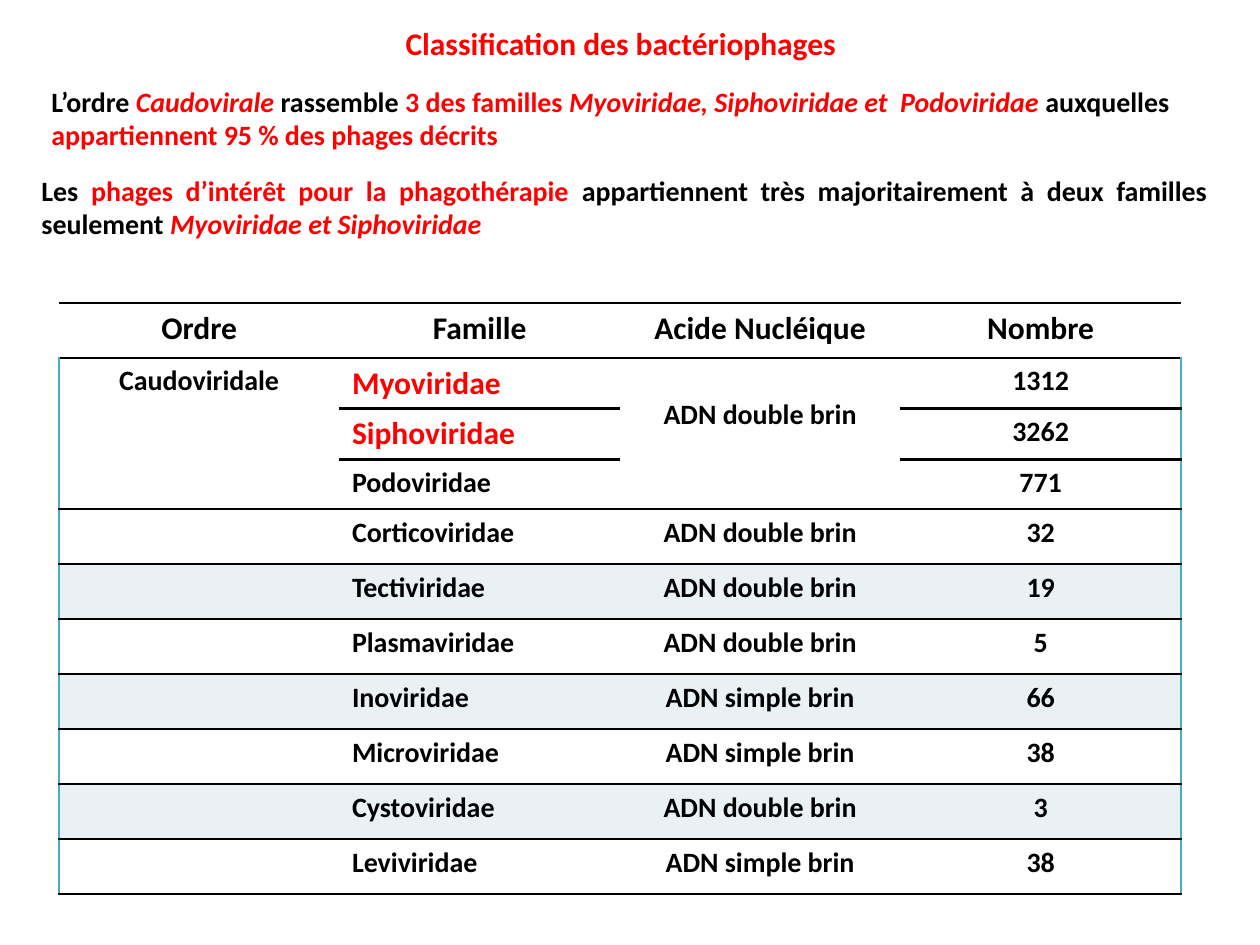
"""Build the slide on the classification of bacteriophages."""
from dataclasses import dataclass

from lxml import etree
from pptx import Presentation
from pptx.dml.color import RGBColor
from pptx.enum.text import MSO_ANCHOR, MSO_AUTO_SIZE, PP_ALIGN
from pptx.oxml.ns import qn
from pptx.util import Pt

LEFT, CENTER, JUSTIFY = PP_ALIGN.LEFT, PP_ALIGN.CENTER, PP_ALIGN.JUSTIFY
TOP = MSO_ANCHOR.TOP
FIT_SHAPE = MSO_AUTO_SIZE.SHAPE_TO_FIT_TEXT
EMU_PER_PX = 914400 // 126


@dataclass(frozen=True)
class Theme:
    font: str = "Calibri"
    text: str = "000000"
    accent: str = "FF0000"
    plain: str = "FFFFFF"
    band: str = "E9F1F5"
    rule: str = "000000"
    side: str = "4BACC6"
    large: int = 18
    body: int = 16
    rule_width: float = 1.5
    side_width: float = 1


THEME = Theme()

HEADERS = ["Ordre", "Famille", "Acide Nucléique", "Nombre"]
DOUBLE, SINGLE = "ADN double brin", "ADN simple brin"
FAMILIES = [
    ("Caudoviridale", "Myoviridae", DOUBLE, "1312"),
    ("", "Siphoviridae", "", "3262"),
    ("", "Podoviridae", "", "771"),
    ("", "Corticoviridae", DOUBLE, "32"),
    ("", "Tectiviridae", DOUBLE, "19"),
    ("", "Plasmaviridae", DOUBLE, "5"),
    ("", "Inoviridae", SINGLE, "66"),
    ("", "Microviridae", SINGLE, "38"),
    ("", "Cystoviridae", DOUBLE, "3"),
    ("", "Leviviridae", SINGLE, "38"),
]
THERAPY_FAMILIES = ("Myoviridae", "Siphoviridae")
ROW_HEIGHTS = [55, 50, 51, 50] + [55] * 7
MERGED_COLUMNS = (0, 2)
MERGE_FIRST, MERGE_LAST = 1, 3
FIRST_BANDED_ROW = 5

ORDER_RUNS = [
    ("L’ordre ", THEME.text, False),
    ("Caudovirale ", THEME.accent, True),
    ("rassemble ", THEME.text, False),
    ("3 des familles ", THEME.accent, False),
    ("Myoviridae, Siphoviridae et  Podoviridae ", THEME.accent, True),
    ("auxquelles ", THEME.text, False),
    ("appartiennent 95 % des phages décrits", THEME.accent, False),
]
THERAPY_RUNS = [
    ("Les ", THEME.text, False),
    ("phages d’intérêt pour la phagothérapie ", THEME.accent, False),
    ("appartiennent très majoritairement à deux familles seulement ", THEME.text, False),
    ("Myoviridae et Siphoviridae", THEME.accent, True),
]


def px(length):
    """Turn pixels into EMU."""
    return length * EMU_PER_PX


def format_font(font, size, color, italic=False):
    """Apply the bold slide font."""
    font.name = THEME.font
    font.size = Pt(size)
    font.bold = True
    font.italic = italic
    font.color.rgb = RGBColor.from_string(color)


def add_title(slide, text, left, top, width, height):
    """Place and format the title placeholder."""
    title = slide.shapes.title
    title.left, title.top, title.width, title.height = map(px, (left, top, width, height))
    frame = title.text_frame
    frame.text = text
    frame.word_wrap = False
    frame.auto_size = FIT_SHAPE
    frame.vertical_anchor = TOP
    paragraph = frame.paragraphs[0]
    paragraph.alignment = LEFT
    format_font(paragraph.runs[0].font, THEME.large, THEME.accent)


def add_statement(slide, runs, left, top, width, height, alignment):
    """Add a paragraph made of coloured runs."""
    frame = slide.shapes.add_textbox(*map(px, (left, top, width, height))).text_frame
    frame.word_wrap = True
    frame.auto_size = FIT_SHAPE
    paragraph = frame.paragraphs[0]
    paragraph.alignment = alignment
    for text, color, italic in runs:
        run = paragraph.add_run()
        run.text = text
        format_font(run.font, THEME.body, color, italic)


def add_border(cell, tag, color, width):
    """Add one cell border, or clear it when no colour is given."""
    properties = cell._tc.get_or_add_tcPr()
    line = etree.SubElement(properties, qn(tag), w=str(Pt(width)))
    if color is None:
        etree.SubElement(line, qn("a:noFill"))
    else:
        fill = etree.SubElement(line, qn("a:solidFill"))
        etree.SubElement(fill, qn("a:srgbClr"), val=color)


def style_cell(cell, row, column):
    """Set the borders and the fill that follow from the cell's place."""
    merged = column in MERGED_COLUMNS and MERGE_FIRST <= row <= MERGE_LAST
    left = THEME.side if row and column == 0 else None
    right = THEME.side if row and column == len(HEADERS) - 1 else None
    top = None if merged and row > MERGE_FIRST else THEME.rule
    bottom = None if merged and MERGE_FIRST < row < MERGE_LAST else THEME.rule
    add_border(cell, "a:lnL", left, THEME.side_width)
    add_border(cell, "a:lnR", right, THEME.side_width)
    add_border(cell, "a:lnT", top, THEME.rule_width)
    add_border(cell, "a:lnB", bottom, THEME.rule_width)
    banded = row >= FIRST_BANDED_ROW and row % 2
    cell.fill.solid()
    cell.fill.fore_color.rgb = RGBColor.from_string(THEME.band if banded else THEME.plain)


def fill_cell(cell, text, row, column):
    """Write and format the text of a cell."""
    cell.text_frame.text = text
    paragraph = cell.text_frame.paragraphs[0]
    paragraph.alignment = LEFT if row and column == 1 else CENTER
    highlighted = text in THERAPY_FAMILIES
    size = THEME.large if highlighted or row == 0 else THEME.body
    for run in paragraph.runs:
        format_font(run.font, size, THEME.accent if highlighted else THEME.text)


def add_family_table(slide, left, top, width):
    """Add the table of phage families."""
    rows = [HEADERS, *FAMILIES]
    bounds = map(px, (left, top, width, sum(ROW_HEIGHTS)))
    table = slide.shapes.add_table(len(rows), len(HEADERS), *bounds).table
    table.first_row = False
    table.horz_banding = False
    for table_row, height in zip(table.rows, ROW_HEIGHTS):
        table_row.height = px(height)
    for column in MERGED_COLUMNS:
        table.cell(MERGE_FIRST, column).merge(table.cell(MERGE_LAST, column))
    for row, values in enumerate(rows):
        for column, text in enumerate(values):
            cell = table.cell(row, column)
            style_cell(cell, row, column)
            if text:
                fill_cell(cell, text, row, column)
    table.cell(MERGE_FIRST, 2).margin_top = px(40)


def main():
    """Build and save the presentation."""
    presentation = Presentation()
    presentation.slide_width, presentation.slide_height = px(1260), px(945)
    slide = presentation.slides.add_slide(presentation.slide_layouts[5])
    add_title(slide, "Classification des bactériophages", 393, 18, 464, 50)
    add_family_table(slide, 59, 303, 1122)
    add_statement(slide, ORDER_RUNS, 39, 78, 1152, 81, LEFT)
    add_statement(slide, THERAPY_RUNS, 29, 167, 1191, 81, JUSTIFY)
    presentation.save("out.pptx")


if __name__ == "__main__":
    main()
